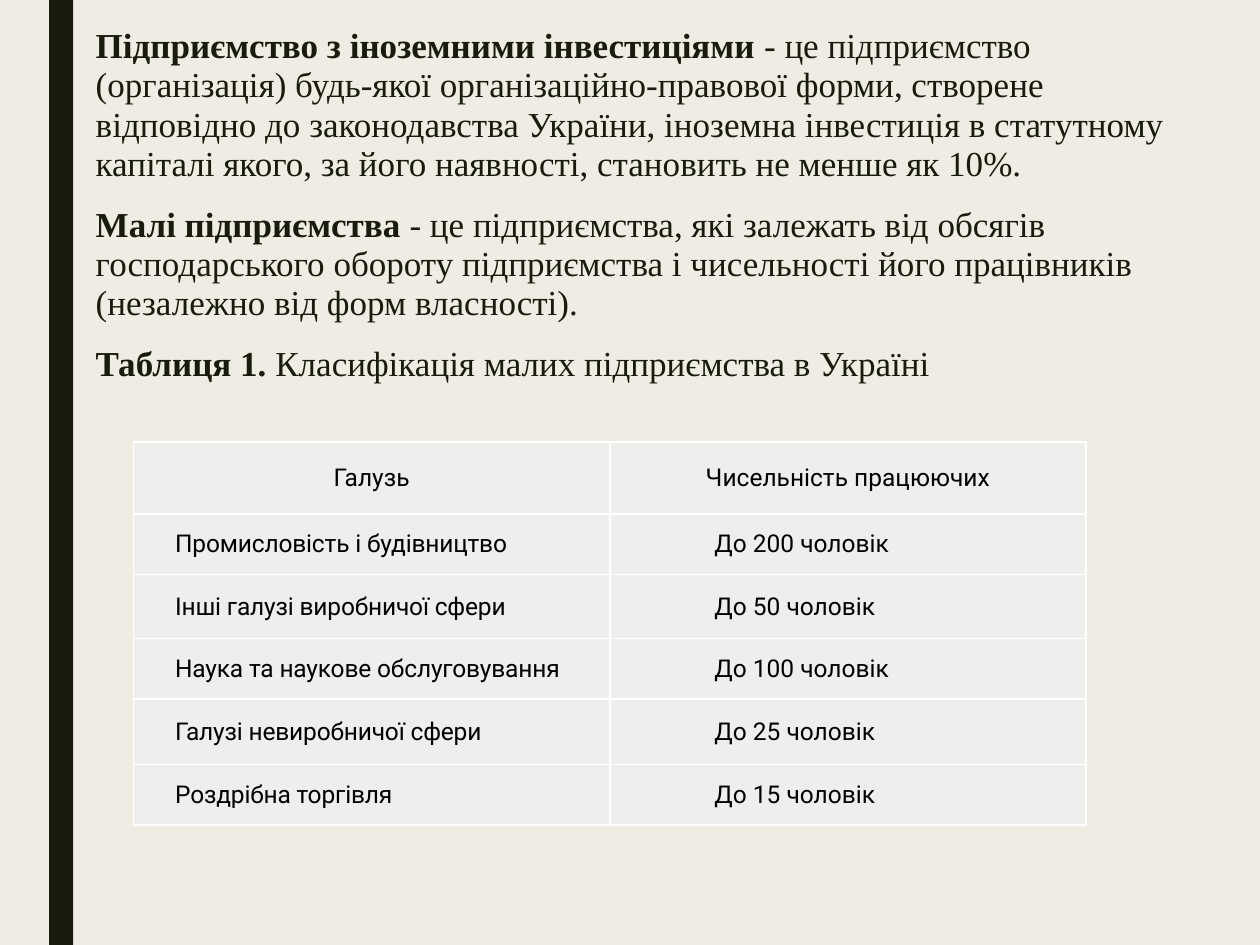
from lxml.etree import SubElement
from pptx import Presentation
from pptx.dml.color import RGBColor
from pptx.enum.shapes import MSO_SHAPE
from pptx.enum.text import MSO_ANCHOR, MSO_AUTO_SIZE, PP_ALIGN
from pptx.oxml.ns import qn
from pptx.util import Inches, Pt

CREAM = RGBColor(0xEF, 0xED, 0xE3)
DARK = RGBColor(0x19, 0x1B, 0x0E)
CELL_GREY = RGBColor(0xEE, 0xEE, 0xED)
BLACK = RGBColor(0, 0, 0)

DEFINITIONS = [
    ("Підприємство з іноземними інвестиціями ",
     "- це підприємство (організація) будь-якої організаційно-правової форми, "
     "створене відповідно до законодавства України, іноземна інвестиція в "
     "статутному капіталі якого, за його наявності, становить не менше як 10%."),
    ("Малі підприємства ",
     "- це підприємства, які залежать від обсягів господарського обороту "
     "підприємства і чисельності його працівників (незалежно від форм власності)."),
    ("Таблиця 1. ", "Класифікація малих підприємства в Україні"),
]
ROWS = [
    ("Галузь", "Чисельність працюючих"),
    ("Промисловість і будівництво", "До 200 чоловік"),
    ("Інші галузі виробничої сфери", "До 50 чоловік"),
    ("Наука та наукове обслуговування", "До 100 чоловік"),
    ("Галузі невиробничої сфери", "До 25 чоловік"),
    ("Роздрібна торгівля", "До 15 чоловік"),
]
ROW_HEIGHTS = [0.57, 0.48, 0.51, 0.48, 0.52, 0.48]
INDENTS = [0.3, 0.8]


def set_indent(p, first_line):
    pPr = p._p.get_or_add_pPr()
    pPr.set("marL", "0")
    pPr.set("indent", str(Inches(first_line)))
    return pPr


def add_borders(cell):
    """Draw a 1 pt white line on all four sides; call before filling the cell."""
    tcPr = cell._tc.get_or_add_tcPr()
    for side in ("lnL", "lnR", "lnT", "lnB"):
        ln = SubElement(tcPr, qn(f"a:{side}"), w=str(Pt(1)))
        fill = SubElement(ln, qn("a:solidFill"))
        SubElement(fill, qn("a:srgbClr"), val="FFFFFF")


prs = Presentation()
prs.slide_width, prs.slide_height = Inches(10), Inches(7.5)
s = prs.slides.add_slide(prs.slide_layouts.get_by_name("Title and Content"))
s.background.fill.solid()
s.background.fill.fore_color.rgb = CREAM
title = s.shapes.title
title.element.getparent().remove(title.element)

# Side bar
bar = s.shapes.add_shape(MSO_SHAPE.RECTANGLE, Inches(0.39), 0, Inches(0.19), prs.slide_height)
bar.shadow.inherit = False
bar.fill.solid()
bar.fill.fore_color.rgb = DARK
bar.line.fill.background()

# Definitions
body = s.placeholders[1]
body.left, body.top = Inches(0.66), Inches(0.16)
body.width, body.height = Inches(9), Inches(3.36)
tf = body.text_frame
tf.word_wrap = True
tf.auto_size = MSO_AUTO_SIZE.NONE
tf.vertical_anchor = MSO_ANCHOR.TOP
for i, (term, text) in enumerate(DEFINITIONS):
    p = tf.add_paragraph() if i else tf.paragraphs[0]
    p.line_spacing = 0.94
    p.space_before, p.space_after = Pt(10), Pt(2)
    SubElement(set_indent(p, 0), qn("a:buNone"))
    for words, bold in ((term, True), (text, False)):
        r = p.add_run()
        r.text = words
        r.font.name, r.font.size, r.font.bold = "Times New Roman", Pt(20), bold
        r.font.color.rgb = DARK

# Table of small enterprises
table = s.shapes.add_table(len(ROWS), 2, Inches(1.06), Inches(3.51),
                           Inches(7.56), Inches(sum(ROW_HEIGHTS))).table
for row, height in zip(table.rows, ROW_HEIGHTS):
    row.height = Inches(height)
for i, texts in enumerate(ROWS):
    for j, text in enumerate(texts):
        cell = table.cell(i, j)
        add_borders(cell)
        cell.fill.solid()
        cell.fill.fore_color.rgb = CELL_GREY
        cell.vertical_anchor = MSO_ANCHOR.MIDDLE
        cell.margin_left = cell.margin_right = Inches(0.03)
        cell.margin_top = cell.margin_bottom = 0
        p = cell.text_frame.paragraphs[0]
        if i == 0:
            p.alignment = PP_ALIGN.CENTER
        else:
            p.alignment = PP_ALIGN.JUSTIFY
            set_indent(p, INDENTS[j])
        r = p.add_run()
        r.text = text
        r.font.name, r.font.size, r.font.bold = "Roboto", Pt(14), False
        r.font.color.rgb = BLACK
        if i and j == 0:
            r.font._element.set("spc", "-10")

prs.save("out.pptx")
